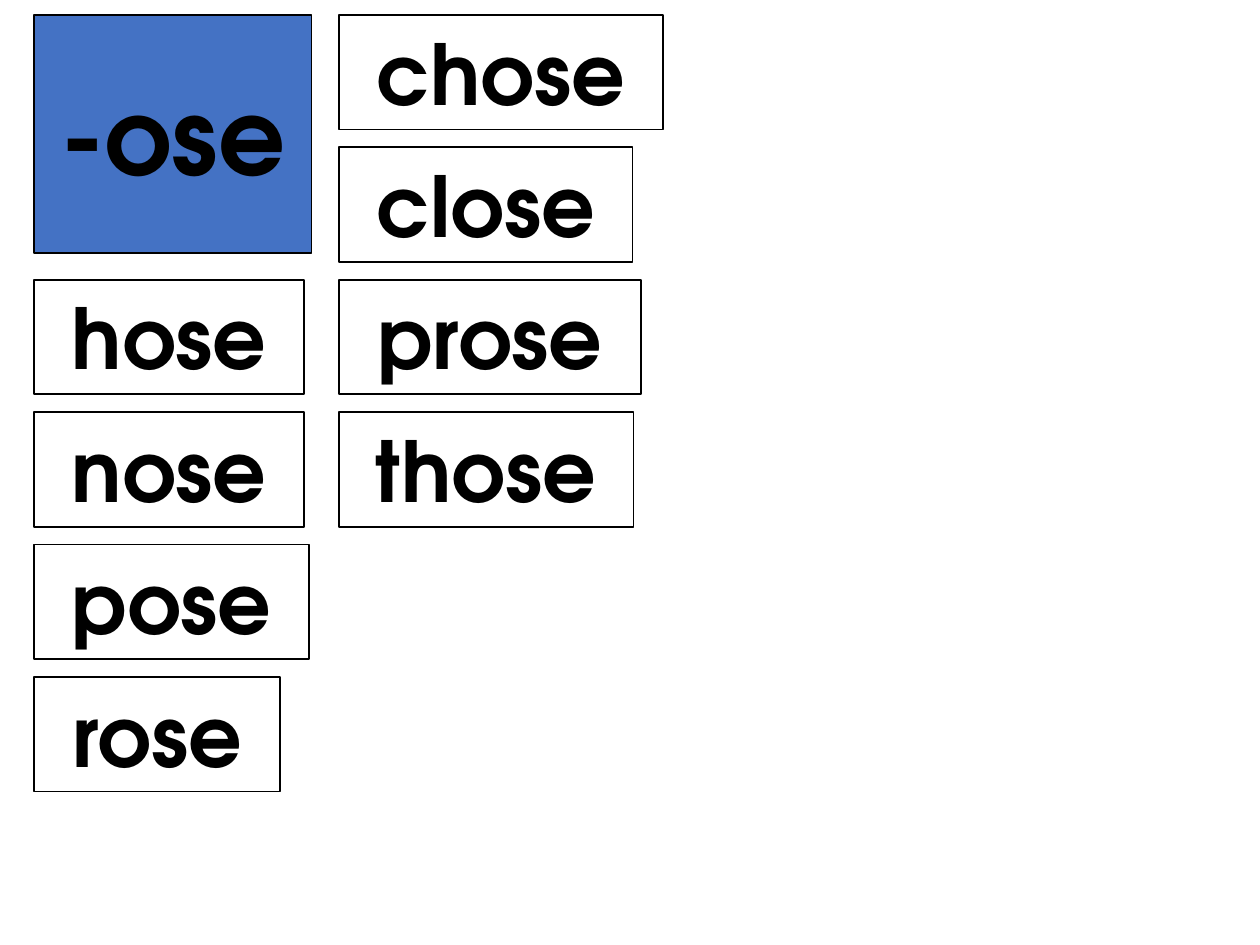
from typing import NamedTuple

from pptx import Presentation
from pptx import util as u
from pptx.dml.color import RGBColor
from pptx.enum import shapes, text

FONT = "TeX Gyre Adventor"
BLACK, WHITE, BLUE = "000000", "FFFFFF", "4472C4"
LEFTS = (0.69, 6.83)
TOP, PITCH, CARD_HEIGHT = 0.3, 2.67, 2.31


class Card(NamedTuple):
    word: str
    column: int
    row: int
    width: float


CARDS = (
    Card("chose", 1, 0, 6.53),
    Card("close", 1, 1, 5.92),
    Card("prose", 1, 2, 6.1),
    Card("those", 1, 3, 5.94),
    Card("hose", 0, 2, 5.44),
    Card("nose", 0, 3, 5.44),
    Card("pose", 0, 4, 5.54),
    Card("rose", 0, 5, 4.95),
)


def color(value: str) -> RGBColor:
    return RGBColor.from_string(value)


def style(sp, label: str, size: int, fill: str) -> None:
    """Fill and outline a box and write its centred bold label."""
    sp.fill.solid()
    sp.fill.fore_color.rgb = color(fill)
    sp.line.color.rgb = color(BLACK)
    sp.line.width = u.Pt(1)
    p = sp.text_frame.paragraphs[0]
    p.text = label
    p.alignment = text.PP_ALIGN.CENTER
    p.font.name = FONT
    p.font.size = u.Pt(size)
    p.font.bold = True
    p.font.color.rgb = color(BLACK)


def add_card(slide, card: Card) -> None:
    sp = slide.shapes.add_shape(
        shapes.MSO_SHAPE.RECTANGLE,
        u.Cm(LEFTS[card.column]), u.Cm(TOP + card.row * PITCH),
        u.Cm(card.width), u.Cm(CARD_HEIGHT))
    sp.shadow.inherit = False
    style(sp, f" {card.word} ", 48, WHITE)
    tf = sp.text_frame
    tf.word_wrap = False
    tf.auto_size = text.MSO_AUTO_SIZE.SHAPE_TO_FIT_TEXT
    tf.vertical_anchor = text.MSO_ANCHOR.TOP


def format_title(title) -> None:
    title.left, title.top = u.Cm(LEFTS[0]), u.Cm(TOP)
    title.width, title.height = u.Cm(5.59), u.Cm(4.8)
    style(title, "-ose", 60, BLUE)
    tf = title.text_frame
    tf.auto_size = text.MSO_AUTO_SIZE.NONE
    tf.vertical_anchor = text.MSO_ANCHOR.MIDDLE


def main() -> None:
    prs = Presentation()
    prs.slide_width, prs.slide_height = u.Cm(25.4), u.Cm(19.05)
    slide = prs.slides.add_slide(prs.slide_layouts[5])
    format_title(slide.shapes.title)
    for card in CARDS:
        add_card(slide, card)
    prs.save("out.pptx")


if __name__ == "__main__":
    main()
